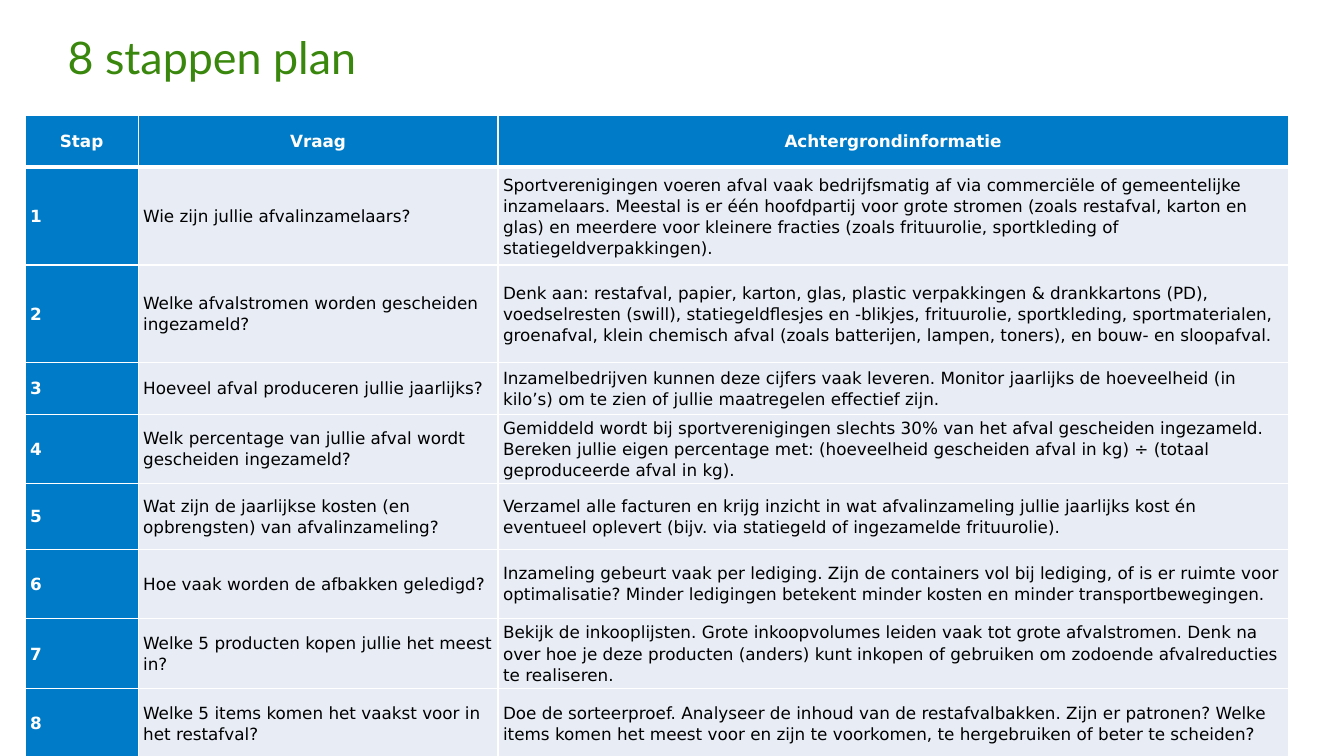
from lxml import etree
from pptx import Presentation
from pptx import util as u
from pptx.dml.color import RGBColor
from pptx.enum import text
from pptx.oxml import ns

COLOURS = {"green": "39870C", "blue": "007BC7", "pale": "E7ECF5",
           "white": "FFFFFF", "black": "000000"}
TITLE_FONT, TABLE_FONT = "Lato", "DejaVu Sans"

COLUMN_WIDTHS = [1.12, 3.57, 7.84]
ROW_HEIGHTS = [0.52, 0.97, 0.97, 0.51, 0.69, 0.65, 0.69, 0.69, 0.69]
HEADERS = ("Stap", "Vraag", "Achtergrondinformatie")
STEPS = [
    ("Wie zijn jullie afvalinzamelaars?",
     "Sportverenigingen voeren afval vaak bedrijfsmatig af via commerciële of gemeentelijke "
     "inzamelaars. Meestal is er één hoofdpartij voor grote stromen (zoals restafval, karton en "
     "glas) en meerdere voor kleinere fracties (zoals frituurolie, sportkleding of "
     "statiegeldverpakkingen)."),
    ("Welke afvalstromen worden gescheiden ingezameld?",
     "Denk aan: restafval, papier, karton, glas, plastic verpakkingen & drankkartons (PD), "
     "voedselresten (swill), statiegeldflesjes en -blikjes, frituurolie, sportkleding, "
     "sportmaterialen, groenafval, klein chemisch afval (zoals batterijen, lampen, toners), "
     "en bouw- en sloopafval."),
    ("Hoeveel afval produceren jullie jaarlijks?",
     "Inzamelbedrijven kunnen deze cijfers vaak leveren. Monitor jaarlijks de hoeveelheid (in "
     "kilo’s) om te zien of jullie maatregelen effectief zijn."),
    ("Welk percentage van jullie afval wordt gescheiden ingezameld?",
     "Gemiddeld wordt bij sportverenigingen slechts 30% van het afval gescheiden ingezameld. "
     "Bereken jullie eigen percentage met: (hoeveelheid gescheiden afval in kg) ÷ (totaal "
     "geproduceerde afval in kg)."),
    ("Wat zijn de jaarlijkse kosten (en opbrengsten) van afvalinzameling?",
     "Verzamel alle facturen en krijg inzicht in wat afvalinzameling jullie jaarlijks kost én "
     "eventueel oplevert (bijv. via statiegeld of ingezamelde frituurolie)."),
    ("Hoe vaak worden de afbakken geledigd?",
     "Inzameling gebeurt vaak per lediging. Zijn de containers vol bij lediging, of is er ruimte "
     "voor optimalisatie? Minder ledigingen betekent minder kosten en minder "
     "transportbewegingen."),
    ("Welke 5 producten kopen jullie het meest in?",
     "Bekijk de inkooplijsten. Grote inkoopvolumes leiden vaak tot grote afvalstromen. Denk na "
     "over hoe je deze producten (anders) kunt inkopen of gebruiken om zodoende afvalreducties "
     "te realiseren."),
    ("Welke 5 items komen het vaakst voor in het restafval?",
     "Doe de sorteerproef. Analyseer de inhoud van de restafvalbakken. Zijn er patronen? Welke "
     "items komen het meest voor en zijn te voorkomen, te hergebruiken of beter te scheiden?"),
]


class SlideBuilder:
    """Holds the current slide and its text and table style."""

    def __init__(self, slide):
        self.slide = slide

    def add_run(self, paragraph, content, font_name, size, colour, bold=False):
        run = paragraph.add_run()
        run.text = content
        run.font.name = font_name
        run.font.size = u.Pt(size)
        run.font.bold = bold
        run.font.color.rgb = RGBColor.from_string(COLOURS[colour])

    def add_title(self, content, left, top, width, height):
        shape = self.slide.shapes.title
        shape.left, shape.top = u.Inches(left), u.Inches(top)
        shape.width, shape.height = u.Inches(width), u.Inches(height)
        frame = shape.text_frame
        frame.word_wrap = True
        frame.auto_size = text.MSO_AUTO_SIZE.SHAPE_TO_FIT_TEXT
        frame.vertical_anchor = text.MSO_ANCHOR.TOP
        paragraph = frame.paragraphs[0]
        paragraph.alignment = text.PP_ALIGN.LEFT
        self.add_run(paragraph, content, TITLE_FONT, 32, "green")

    def add_borders(self, cell, top, bottom):
        properties = cell._tc.get_or_add_tcPr()
        for side, points in (("L", 1), ("R", 1), ("T", top), ("B", bottom)):
            line = etree.SubElement(properties, ns.qn(f"a:ln{side}"), w=str(u.Pt(points)))
            fill = etree.SubElement(line, ns.qn("a:solidFill"))
            etree.SubElement(fill, ns.qn("a:srgbClr"), val=COLOURS["white"])

    def fill_cell(self, cell, content, is_header, is_first_step, is_blue):
        cell.margin_left = cell.margin_right = u.Inches(0.05)
        cell.margin_top = cell.margin_bottom = 0
        cell.vertical_anchor = text.MSO_ANCHOR.MIDDLE
        # Borders come before the fill in the cell properties
        self.add_borders(cell, 3 if is_first_step else 1, 3 if is_header else 1)
        cell.fill.solid()
        cell.fill.fore_color.rgb = RGBColor.from_string(COLOURS["blue" if is_blue else "pale"])
        paragraph = cell.text_frame.paragraphs[0]
        paragraph.alignment = text.PP_ALIGN.CENTER if is_header else text.PP_ALIGN.LEFT
        paragraph.line_spacing = 1.07
        paragraph.space_after = u.Pt(8)
        self.add_run(paragraph, content, TABLE_FONT, 12,
                     "white" if is_blue else "black", bold=is_blue)

    def add_table(self, rows, left, top):
        table = self.slide.shapes.add_table(
            len(rows), len(COLUMN_WIDTHS), u.Inches(left), u.Inches(top),
            u.Inches(sum(COLUMN_WIDTHS)), u.Inches(sum(ROW_HEIGHTS))).table
        table.horz_banding = False
        table.first_col = True
        for column, width in zip(table.columns, COLUMN_WIDTHS):
            column.width = u.Inches(width)
        for row_index, (row, height) in enumerate(zip(rows, ROW_HEIGHTS)):
            table.rows[row_index].height = u.Inches(height)
            for column_index, content in enumerate(row):
                self.fill_cell(table.cell(row_index, column_index), content,
                               is_header=row_index == 0, is_first_step=row_index == 1,
                               is_blue=row_index == 0 or column_index == 0)


def main():
    presentation = Presentation()
    presentation.slide_width = u.Inches(13.33)
    presentation.slide_height = u.Inches(7.5)
    title_only = presentation.slide_layouts[5]
    builder = SlideBuilder(presentation.slides.add_slide(title_only))

    # Title
    builder.add_title("8 stappen plan", 0.57, 0.24, 4.41, 0.64)

    # Table with the numbered steps
    numbered_steps = [(str(number), *step) for number, step in enumerate(STEPS, 1)]
    builder.add_table([HEADERS] + numbered_steps, 0.25, 1.14)

    presentation.save("out.pptx")


if __name__ == "__main__":
    main()
